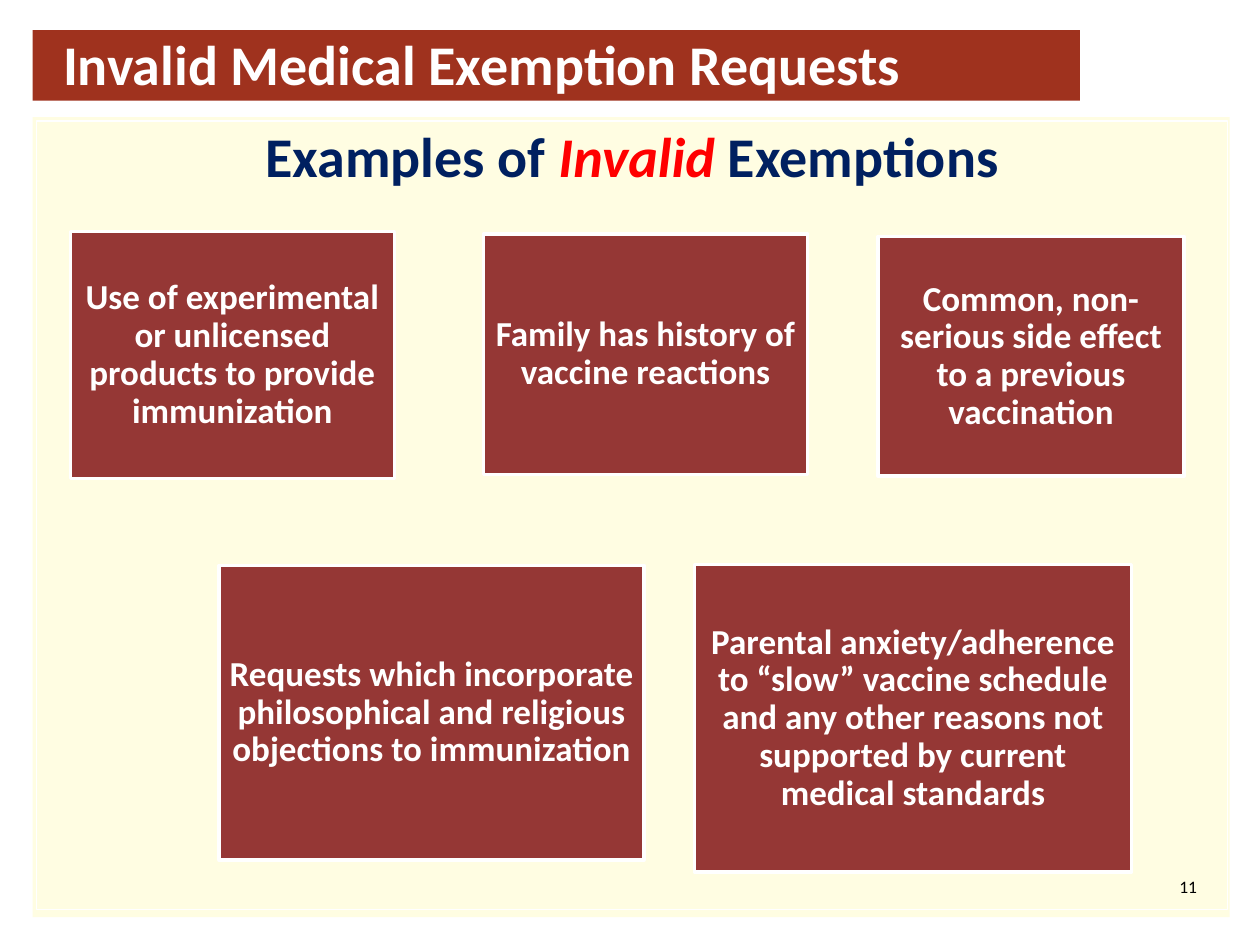
import pptx
import pptx.dml.color
import pptx.enum.shapes
import pptx.enum.text
import pptx.oxml.ns
import pptx.util
from lxml import etree

Cm = pptx.util.Cm
Pt = pptx.util.Pt
ALIGN = pptx.enum.text.PP_ALIGN
ANCHOR = pptx.enum.text.MSO_ANCHOR

WHITE, NAVY, RED, BLACK = "FFFFFF", "002060", "FF0000", "000000"
BANNER, CREAM, MAROON = "9F321E", "FFFDE2", "953735"

# Left, top, width and height in cm, relative to the examples panel
EXAMPLES = [
    ("Use of experimental or unlicensed products to provide immunization",
     (0.76, 2.31, 6.53, 4.98)),
    ("Family has history of vaccine reactions", (9.09, 2.36, 6.53, 4.85)),
    ("Common, non-serious side effect to a previous vaccination",
     (17.04, 2.41, 6.17, 4.83)),
    ("Requests which incorporate philosophical and religious objections "
     "to immunization", (3.76, 9.04, 8.56, 5.94)),
    ("Parental anxiety/adherence to “slow” vaccine schedule and any other "
     "reasons not supported by current medical standards",
     (13.34, 9.02, 8.81, 6.2)),
]


def color(value):
    return pptx.dml.color.RGBColor.from_string(value)


def place(shape, box):
    shape.left, shape.top, shape.width, shape.height = map(Cm, box)


def within(box, offset):
    """Turn an offset box into slide coordinates."""
    return (box[0] + offset[0], box[1] + offset[1], *offset[2:])


def add_box(slide, box, fill, line=None):
    shape = slide.shapes.add_shape(pptx.enum.shapes.MSO_SHAPE.RECTANGLE,
                                   *map(Cm, box))
    shape.shadow.inherit = False
    shape.fill.solid()
    shape.fill.fore_color.rgb = color(fill)
    if line:
        shape.line.color.rgb = color(line)
        shape.line.width = Pt(2)
    else:
        shape.line.fill.background()
    return shape


def send_to_back(slide, shape):
    tree = slide.shapes._spTree
    tree.remove(shape._element)
    tree.insert(2, shape._element)


def write(shape, text, size, hex_color=WHITE, bold=True, align=ALIGN.CENTER,
          anchor=ANCHOR.TOP, inset=0, spacing=1.0):
    """Fill a shape with one paragraph; text is a string or a list of
    (text, colour, italic) runs."""
    frame = shape.text_frame
    frame.word_wrap = True
    frame.auto_size = pptx.enum.text.MSO_AUTO_SIZE.NONE
    frame.vertical_anchor = anchor
    frame.margin_left = frame.margin_right = Cm(inset)
    frame.margin_top = frame.margin_bottom = Cm(inset)
    paragraph = frame.paragraphs[0]
    paragraph.alignment = align
    paragraph.line_spacing = spacing
    paragraph.space_before = Pt(0)
    runs = [(text, hex_color, False)] if isinstance(text, str) else text
    for words, run_color, italic in runs:
        run = paragraph.add_run()
        run.text = words
        run.font.name = "Calibri"
        run.font.size = Pt(size)
        run.font.bold = bold
        run.font.italic = italic
        run.font.color.rgb = color(run_color)
    return paragraph


def remove_bullet(paragraph):
    properties = paragraph._p.get_or_add_pPr()
    properties.set("marL", "0")
    properties.set("indent", "0")
    etree.SubElement(properties, pptx.oxml.ns.qn("a:buNone"))


def build_header(slide, box):
    send_to_back(slide, add_box(slide, box, BANNER))
    title = slide.shapes.title
    place(title, within(box, (0.61, 0.03, 20.4, 1.27)))
    write(title, "Invalid Medical Exemption Requests", 32,
          align=ALIGN.LEFT, anchor=ANCHOR.MIDDLE)


def build_examples(slide, box):
    send_to_back(slide, add_box(slide, box, CREAM))
    heading = slide.placeholders[1]
    place(heading, within(box, (0.08, 0.08, 24, 15.9)))
    heading.line.color.rgb = color(WHITE)
    heading.line.width = Pt(0.75)
    paragraph = write(heading, [("Examples of ", NAVY, False),
                                ("Invalid ", RED, True),
                                ("Exemptions", NAVY, False)], 32)
    remove_bullet(paragraph)
    for example, offset in EXAMPLES:
        card = add_box(slide, within(box, offset), MAROON, line=WHITE)
        write(card, example, 20, anchor=ANCHOR.MIDDLE, inset=0.2, spacing=0.9)
    page_number = slide.shapes.add_textbox(
        *map(Cm, within(box, (22.5, 15.29, 0.97, 0.48))))
    write(page_number, "11", 10, hex_color=BLACK, bold=False,
          align=ALIGN.RIGHT)


def main():
    deck = pptx.Presentation()
    deck.slide_width, deck.slide_height = Cm(25.4), Cm(19.05)
    slide = deck.slides.add_slide(deck.slide_layouts[1])
    build_header(slide, (0.66, 0.61, 21.11, 1.42))
    build_examples(slide, (0.66, 2.36, 24.13, 16.13))
    deck.save("out.pptx")


if __name__ == "__main__":
    main()
